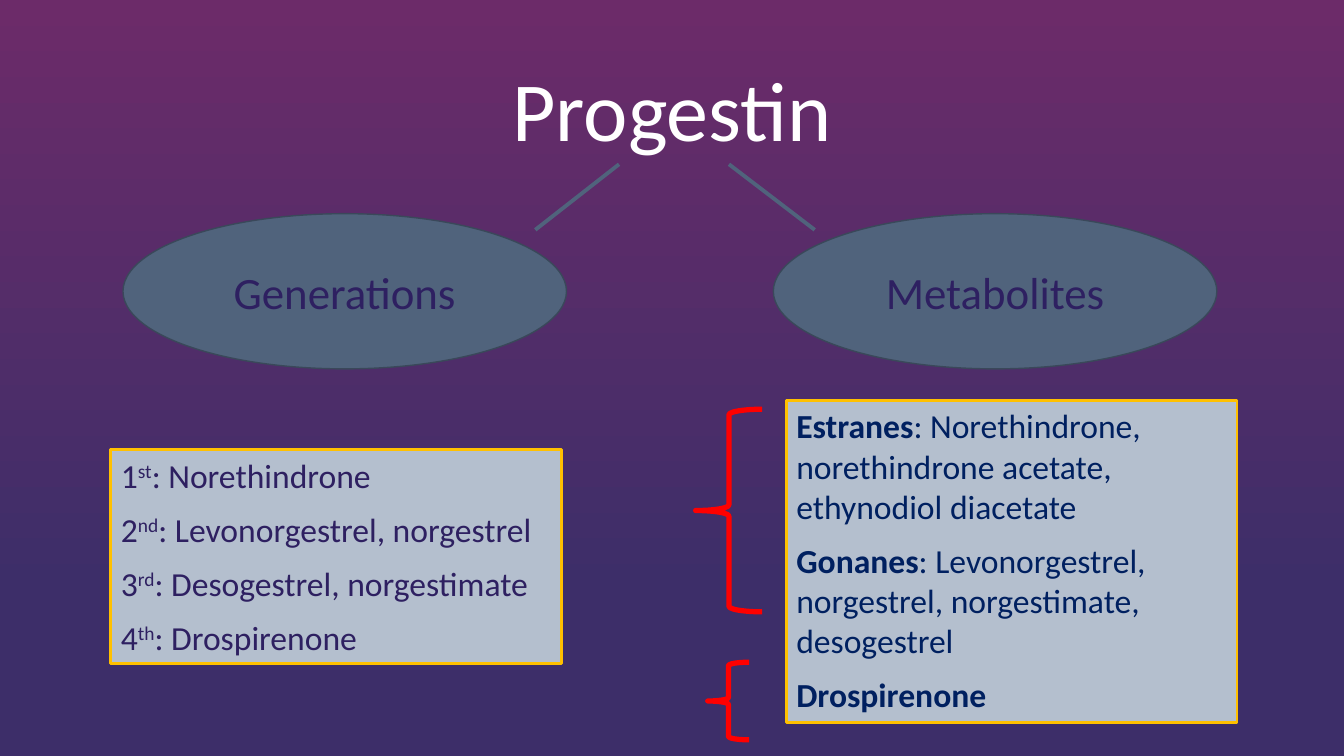
from lxml import etree
from pptx import Presentation
from pptx.dml.color import RGBColor
from pptx.enum.shapes import MSO_CONNECTOR, MSO_SHAPE
from pptx.enum.text import MSO_ANCHOR, MSO_AUTO_SIZE, PP_ALIGN
from pptx.oxml.ns import qn
from pptx.util import Inches, Pt

OVAL, BOX, BRACE = MSO_SHAPE.OVAL, MSO_SHAPE.RECTANGLE, MSO_SHAPE.LEFT_BRACE
STRAIGHT = MSO_CONNECTOR.STRAIGHT
TOP, MIDDLE, BOTTOM = MSO_ANCHOR.TOP, MSO_ANCHOR.MIDDLE, MSO_ANCHOR.BOTTOM
LEFT, CENTER = PP_ALIGN.LEFT, PP_ALIGN.CENTER
FIT_TEXT = MSO_AUTO_SIZE.SHAPE_TO_FIT_TEXT

PLUM = RGBColor(0x6C, 0x2B, 0x69)
INDIGO = RGBColor(0x3D, 0x2E, 0x69)
WHITE = RGBColor(0xFF, 0xFF, 0xFF)
SLATE = RGBColor(0x50, 0x63, 0x7C)
DARK_SLATE = RGBColor(0x3A, 0x48, 0x5A)
PALE_SLATE = RGBColor(0xB4, 0xBF, 0xCE)
VIOLET = RGBColor(0x2E, 0x20, 0x61)
NAVY = RGBColor(0x00, 0x20, 0x60)
GOLD = RGBColor(0xFF, 0xC0, 0x00)
RED = RGBColor(0xFF, 0x00, 0x00)


class ProgestinSlide:
    font_name = "Calibri"

    def __init__(self, deck):
        self.width, self.height = deck.slide_width, deck.slide_height
        self.slide = deck.slides.add_slide(deck.slide_layouts[6])

    def place(self, *percents):
        sides = (self.width, self.height) * 2
        return [round(side * share / 100) for side, share in zip(sides, percents)]

    def background(self, top, bottom, bottom_from):
        fill = self.slide.background.fill
        fill.gradient()
        fill.gradient_angle = 270
        first, last = fill.gradient_stops
        first.color.rgb, first.position = top, 0
        last.color.rgb, last.position = bottom, bottom_from

    def add_text(self, frame, paragraphs, size, color, anchor, align, gap=0):
        frame.word_wrap = True
        frame.vertical_anchor = anchor
        for index, pieces in enumerate(paragraphs):
            paragraph = frame.add_paragraph() if index else frame.paragraphs[0]
            paragraph.alignment = align
            if index and gap:
                paragraph.space_before = Pt(gap)
            for words, style in pieces:
                run = paragraph.add_run()
                run.text = words
                run.font.name = self.font_name
                run.font.size = Pt(size)
                run.font.color.rgb = color
                run.font.bold = style == "bold"
                if style == "super":
                    run._r.get_or_add_rPr().set("baseline", "30000")

    def title(self, area, words):
        frame = self.slide.shapes.add_textbox(*self.place(*area)).text_frame
        self.add_text(frame, [[(words, "")]], 60, WHITE, BOTTOM, CENTER)
        frame.paragraphs[0].line_spacing = 0.9

    def shape(self, kind, area, line, weight, fill=None):
        shape = self.slide.shapes.add_shape(kind, *self.place(*area))
        shape.shadow.inherit = False
        shape.line.color.rgb = line
        shape.line.width = Pt(weight)
        if fill is None:
            shape.fill.background()
        else:
            shape.fill.solid()
            shape.fill.fore_color.rgb = fill
        return shape

    def branch(self, area, words):
        oval = self.shape(OVAL, area, DARK_SLATE, 1, SLATE)
        self.add_text(oval.text_frame, [[(words, "")]], 32, VIOLET, MIDDLE, CENTER)

    def drug_list(self, area, paragraphs, color):
        box = self.shape(BOX, area, GOLD, 2, PALE_SLATE)
        self.add_text(box.text_frame, paragraphs, 24, color, TOP, LEFT, gap=9.75)
        box.text_frame.auto_size = FIT_TEXT

    def brace(self, area):
        self.shape(BRACE, area, RED, 3.75)

    def link(self, ends):
        connector = self.slide.shapes.add_connector(STRAIGHT, *self.place(*ends))
        connector.line.color.rgb = SLATE
        connector.line.width = Pt(2.75)
        etree.SubElement(connector._element.spPr, qn("a:effectLst"))


def main():
    deck = Presentation()
    deck.slide_width, deck.slide_height = Inches(13.33), Inches(7.5)
    page = ProgestinSlide(deck)
    page.background(PLUM, INDIGO, 0.78)
    page.title((12.5, 6.53, 75, 15.2), "Progestin")

    for left, words in ((9.15, "Generations"), (57.54, "Metabolites")):
        page.branch((left, 28.27, 33, 20.53), words)
    for start, end in ((46.06, 39.83), (54.24, 60.62)):
        page.link((start, 21.73, end, 30.4))

    generations = (
        ("1", "st", "Norethindrone"),
        ("2", "nd", "Levonorgestrel, norgestrel"),
        ("3", "rd", "Desogestrel, norgestimate"),
        ("4", "th", "Drospirenone"),
    )
    page.drug_list(
        (8.25, 59.47, 33.53, 28.27),
        [[(number, ""), (suffix, "super"), (f": {drugs}", "")]
         for number, suffix, drugs in generations],
        VIOLET,
    )

    metabolites = (
        ("Estranes", ": Norethindrone, norethindrone acetate, ethynodiol diacetate"),
        ("Gonanes", ": Levonorgestrel, norgestrel, norgestimate, desogestrel"),
        ("Drospirenone", ""),
    )
    page.drug_list(
        (58.51, 52.93, 33.53, 42.67),
        [[(family, "bold")] + ([(drugs, "")] if drugs else [])
         for family, drugs in metabolites],
        NAVY,
    )

    for area in ((51.76, 54.13, 4.95, 26.8), (52.66, 87.6, 3.08, 10.27)):
        page.brace(area)
    deck.save("out.pptx")


if __name__ == "__main__":
    main()
